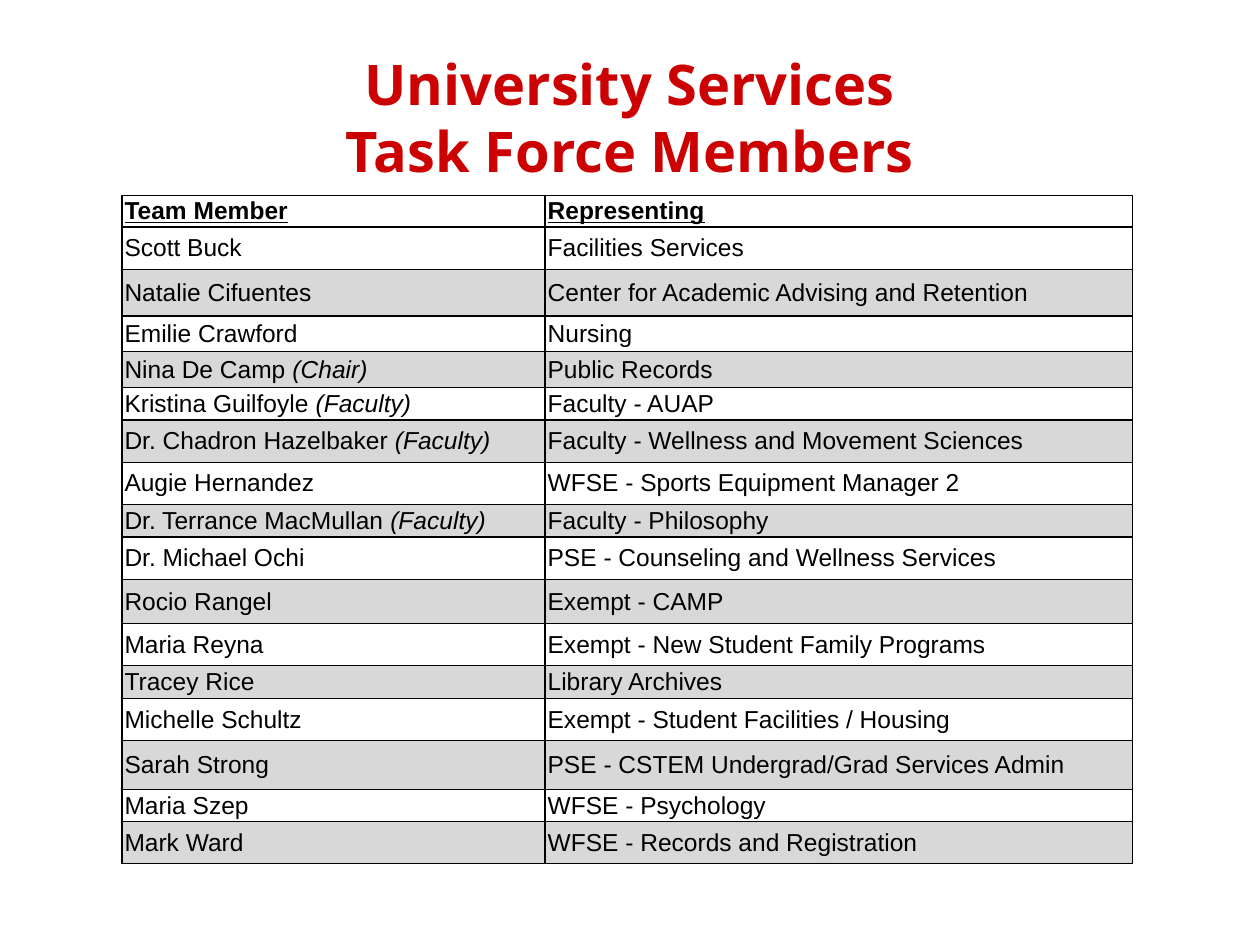
from lxml.etree import SubElement
from pptx import Presentation
from pptx.dml.color import RGBColor
from pptx.enum.text import MSO_ANCHOR as Anchor, PP_ALIGN as Align
from pptx.oxml.ns import qn
from pptx.util import Cm, Pt

TITLE = "University Services\vTask Force Members"
BLACK, RED, GREY = "000000", "CC0202", "D8D8D8"
TITLE_FONT = {"name": "Open Sans", "size": Pt(32), "bold": True}
BODY_FONT = {"name": "Arial", "size": Pt(14), "bold": False}
HEADER_FONT = BODY_FONT | {"bold": True, "underline": True}
CELL_FORMAT = {
    "vertical_anchor": Anchor.MIDDLE,
    "margin_left": Cm(0.05), "margin_right": Cm(0.05),
    "margin_top": 0, "margin_bottom": 0,
}
COLUMN_WIDTHS = (8.53, 11.84)
HEADER = ("Team Member", "Representing")
HEADER_HEIGHT = 0.64

# Name, role, area represented, row height in cm
MEMBERS = [
    ("Scott Buck", "", "Facilities Services", 0.85),
    ("Natalie Cifuentes", "", "Center for Academic Advising and Retention", 0.94),
    ("Emilie Crawford", "", "Nursing", 0.72),
    ("Nina De Camp", "Chair", "Public Records", 0.72),
    ("Kristina Guilfoyle", "Faculty", "Faculty - AUAP", 0.66),
    ("Dr. Chadron Hazelbaker", "Faculty", "Faculty - Wellness and Movement Sciences", 0.85),
    ("Augie Hernandez", "", "WFSE - Sports Equipment Manager 2", 0.85),
    ("Dr. Terrance MacMullan", "Faculty", "Faculty - Philosophy", 0.66),
    ("Dr. Michael Ochi", "", "PSE - Counseling and Wellness Services", 0.85),
    ("Rocio Rangel", "", "Exempt - CAMP", 0.89),
    ("Maria Reyna", "", "Exempt - New Student Family Programs", 0.85),
    ("Tracey Rice", "", "Library Archives", 0.66),
    ("Michelle Schultz", "", "Exempt - Student Facilities / Housing", 0.85),
    ("Sarah Strong", "", "PSE - CSTEM Undergrad/Grad Services Admin", 0.99),
    ("Maria Szep", "", "WFSE - Psychology", 0.64),
    ("Mark Ward", "", "WFSE - Records and Registration", 0.85),
]


def set_format(target, values):
    for name, value in values.items():
        setattr(target, name, value)


def set_color(color_format, hex_color):
    color_format.rgb = RGBColor.from_string(hex_color)


def format_font(font, values, hex_color):
    set_format(font, values)
    set_color(font.color, hex_color)


def add_borders(cell):
    """Draw a thin black line on all four sides, placed ahead of the fill."""
    properties = cell._tc.get_or_add_tcPr()
    for index, side in enumerate(("lnL", "lnR", "lnT", "lnB")):
        line = SubElement(properties, qn(f"a:{side}"), w=str(Pt(1)))
        fill = SubElement(line, qn("a:solidFill"))
        SubElement(fill, qn("a:srgbClr"), val=BLACK)
        properties.insert(index, line)


def fill_cell(cell, spans, font_values, shaded=False):
    """Write (text, italic) spans into a bordered cell."""
    set_format(cell, CELL_FORMAT)
    para = cell.text_frame.paragraphs[0]
    for text, italic in spans:
        span = para.add_run()
        span.text = text
        format_font(span.font, font_values | {"italic": italic}, BLACK)
    if shaded:
        cell.fill.solid()
        set_color(cell.fill.fore_color, GREY)
    else:
        cell.fill.background()
    add_borders(cell)


def add_title(page):
    title = page.shapes.title
    set_format(title, {"left": Cm(1.27), "top": Cm(0.76),
                       "width": Cm(22.86), "height": Cm(3.18)})
    title.text_frame.text = TITLE
    title.text_frame.vertical_anchor = Anchor.MIDDLE
    para = title.text_frame.paragraphs[0]
    para.alignment = Align.CENTER
    for span in para.runs:
        format_font(span.font, TITLE_FONT, RED)


def add_member_table(page):
    heights = [HEADER_HEIGHT] + [member[-1] for member in MEMBERS]
    table = page.shapes.add_table(
        len(heights), len(COLUMN_WIDTHS), Cm(2.46), Cm(3.94),
        Cm(sum(COLUMN_WIDTHS)), Cm(sum(heights))).table
    set_format(table, {"first_row": False, "horz_banding": False})
    for column, width in zip(table.columns, COLUMN_WIDTHS):
        column.width = Cm(width)
    for row, height in zip(table.rows, heights):
        row.height = Cm(height)

    # Header row
    for column, heading in enumerate(HEADER):
        fill_cell(table.cell(0, column), [(heading, False)], HEADER_FONT)

    # Member rows, every second one shaded
    for row, (name, role, area, _) in enumerate(MEMBERS, start=1):
        spans = [(f"{name} ", False), (f"({role})", True)] if role else [(name, False)]
        shaded = row % 2 == 0
        fill_cell(table.cell(row, 0), spans, BODY_FONT, shaded)
        fill_cell(table.cell(row, 1), [(area, False)], BODY_FONT, shaded)


def main():
    deck = Presentation()
    set_format(deck, {"slide_width": Cm(25.4), "slide_height": Cm(19.05)})
    page = deck.slides.add_slide(deck.slide_layouts.get_by_name("Title Only"))
    add_title(page)
    add_member_table(page)
    deck.save("out.pptx")


if __name__ == "__main__":
    main()
